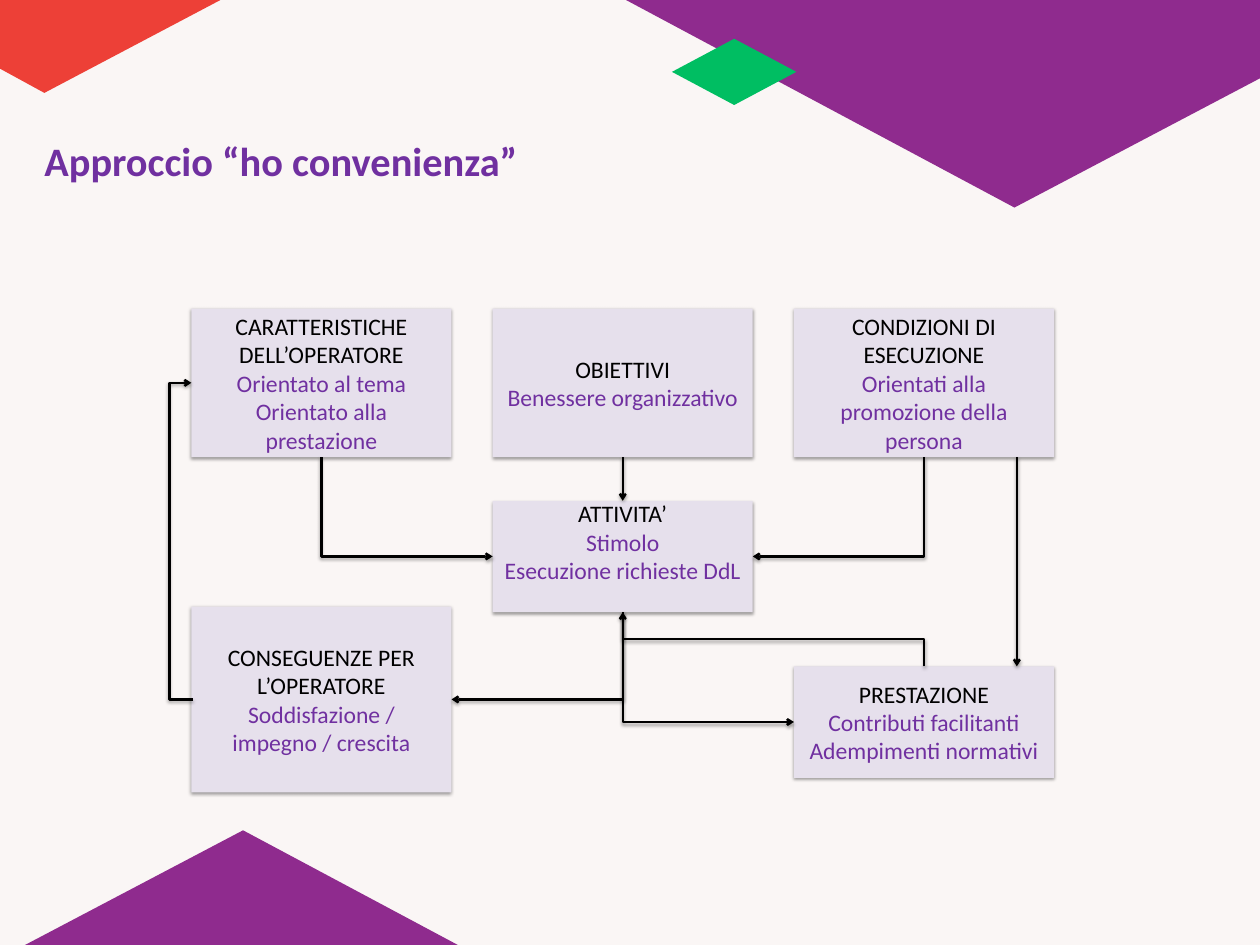
from lxml.etree import SubElement
from pptx import Presentation
from pptx.dml.color import RGBColor
from pptx.enum.shapes import MSO_CONNECTOR, MSO_SHAPE
from pptx.enum.text import MSO_ANCHOR, PP_ALIGN
from pptx.oxml.ns import qn
from pptx.util import Inches, Pt

WIDTH, HEIGHT = 15.6, 11.7
FONT = "Calibri"
CREAM = RGBColor(0xFA, 0xF6, 0xF5)
RED = RGBColor(0xED, 0x40, 0x37)
PLUM = RGBColor(0x8F, 0x2B, 0x8E)
GREEN = RGBColor(0x00, 0xBE, 0x62)
VIOLET = RGBColor(0x70, 0x30, 0xA0)
LILAC = RGBColor(0xE6, 0xE0, 0xEC)
BLACK = RGBColor(0x00, 0x00, 0x00)

TITLE = "Approccio “ho convenienza”"
DECORATIONS = [
    (RED, [(0.55, 1.15), (0, 0.85), (0, 0), (2.73, 0)]),
    (PLUM, [(0.31, HEIGHT), (3.01, 10.28), (5.67, HEIGHT)]),
    (PLUM, [(12.56, 2.57), (7.75, 0), (WIDTH, 0), (WIDTH, 0.97)]),
    (GREEN, [(9.09, 1.3), (8.32, 0.89), (9.09, 0.48), (9.86, 0.89)]),
]

# Grid of boxes: equal columns, top and height per box
GRID_LEFT, COLUMN_STEP, BOX_WIDTH = 2.37, 3.73, 3.22
# name: column, top, height, bottom inset, heading, lines
BOXES = {
    "operator": (0, 3.82, 1.84, 0.05, "CARATTERISTICHE DELL’OPERATORE",
                 ["Orientato al tema", "Orientato alla prestazione"]),
    "goals": (1, 3.82, 1.84, 0.05, "OBIETTIVI", ["Benessere organizzativo"]),
    "conditions": (2, 3.82, 1.84, 0.05, "CONDIZIONI DI ESECUZIONE",
                   ["Orientati alla promozione della persona"]),
    "activity": (1, 6.2, 1.38, 0.41, "ATTIVITA’",
                 ["Stimolo", "Esecuzione richieste DdL"]),
    "results": (0, 7.51, 2.3, 0.05, "CONSEGUENZE PER L’OPERATORE",
                ["Soddisfazione / impegno / crescita"]),
    "performance": (2, 8.25, 1.38, 0.05, "PRESTAZIONE",
                    ["Contributi facilitanti", "Adempimenti normativi"]),
}

TOP, LEFT, BOTTOM, RIGHT = range(4)
# Corner arrows: the pointed-at side first, then the side the line comes from
CORNERS = [
    ("activity", RIGHT, "conditions", BOTTOM),
    ("activity", LEFT, "operator", BOTTOM),
    ("results", RIGHT, "activity", BOTTOM),
    ("performance", LEFT, "activity", BOTTOM),
]
SIDE_ARROW_X = 12.59
LOOP_REACH, LOOP_WIDTH = 0.29, 0.02


def add_shadow(shape):
    properties = shape._element.spPr
    effects = properties.find(qn("a:effectLst"))
    if effects is None:
        effects = SubElement(properties, qn("a:effectLst"))
    shadow = SubElement(effects, qn("a:outerShdw"), blurRad=str(Pt(3.1)),
                        dist=str(Pt(1.6)), dir="5400000", rotWithShape="0")
    color = SubElement(shadow, qn("a:srgbClr"), val="000000")
    SubElement(color, qn("a:alpha"), val="38000")


def add_decoration(page, color, points):
    corners = [(Inches(x), Inches(y)) for x, y in points]
    builder = page.shapes.build_freeform(*corners[0])
    builder.add_line_segments(corners[1:], close=True)
    shape = builder.convert_to_shape()
    shape.shadow.inherit = False
    shape.fill.solid()
    shape.fill.fore_color.rgb = color
    shape.line.fill.background()


def style(para, size, color, bold=False):
    para.font.name = FONT
    para.font.size = Pt(size)
    para.font.color.rgb = color
    para.font.bold = bold


def add_title(page):
    frame = page.shapes.add_textbox(Inches(0.55), Inches(1.68),
                                    Inches(6.65), Inches(0.61)).text_frame
    frame.word_wrap = True
    frame.margin_left = frame.margin_right = 0
    frame.margin_top = frame.margin_bottom = 0
    frame.text = TITLE
    style(frame.paragraphs[0], 36, VIOLET, bold=True)


def add_box(page, column, top, height, inset, heading, lines):
    box = page.shapes.add_shape(
        MSO_SHAPE.RECTANGLE, Inches(GRID_LEFT + column * COLUMN_STEP),
        Inches(top), Inches(BOX_WIDTH), Inches(height))
    box.shadow.inherit = False
    box.fill.solid()
    box.fill.fore_color.rgb = LILAC
    box.line.fill.background()
    add_shadow(box)
    frame = box.text_frame
    frame.word_wrap = True
    frame.vertical_anchor = MSO_ANCHOR.MIDDLE
    frame.margin_bottom = Inches(inset)
    frame.text = "\n".join([heading] + lines)
    for index, para in enumerate(frame.paragraphs):
        para.alignment = PP_ALIGN.CENTER
        style(para, 21.1, VIOLET if index else BLACK)
    return box


def add_arrow(page, kind, arrow_end="a:tailEnd"):
    arrow = page.shapes.add_connector(kind, 0, 0, 0, 0)
    arrow.line.color.rgb = BLACK
    arrow.line.width = Pt(2)
    SubElement(arrow.line._get_or_add_ln(), qn(arrow_end), type="arrow")
    add_shadow(arrow)
    return arrow


def join(arrow, start, start_side, end, end_side):
    arrow.begin_connect(start, start_side)
    arrow.end_connect(end, end_side)


def turn_upright(arrow):
    """Rotate an elbow that runs up and left so it leaves vertically."""
    middle_x = arrow.left + arrow.width // 2
    middle_y = arrow.top + arrow.height // 2
    arrow.width, arrow.height = arrow.height, arrow.width
    arrow.left = middle_x - arrow.width // 2
    arrow.top = middle_y - arrow.height // 2
    frame = arrow._element.spPr.find(qn("a:xfrm"))
    frame.set("rot", "16200000")
    frame.set("flipH", "0")
    frame.set("flipV", "1")


def add_arrows(page, boxes):
    straight = add_arrow(page, MSO_CONNECTOR.STRAIGHT)
    join(straight, boxes["goals"], BOTTOM, boxes["activity"], TOP)

    side = add_arrow(page, MSO_CONNECTOR.STRAIGHT)
    side.begin_x = side.end_x = Inches(SIDE_ARROW_X)
    side.end_y = boxes["performance"].top
    side.begin_y = boxes["conditions"].top + boxes["conditions"].height

    for target, target_side, source, source_side in CORNERS:
        corner = add_arrow(page, MSO_CONNECTOR.ELBOW, "a:headEnd")
        corner._element.spPr.find(qn("a:prstGeom")).set("prst", "bentConnector2")
        join(corner, boxes[target], target_side, boxes[source], source_side)

    feedback = add_arrow(page, MSO_CONNECTOR.ELBOW)
    join(feedback, boxes["performance"], TOP, boxes["activity"], BOTTOM)
    turn_upright(feedback)

    loop = add_arrow(page, MSO_CONNECTOR.ELBOW)
    join(loop, boxes["results"], LEFT, boxes["operator"], LEFT)
    loop.begin_x = boxes["results"].left + Inches(LOOP_WIDTH)
    geometry = loop._element.spPr.find(qn("a:prstGeom"))
    guides = geometry.find(qn("a:avLst"))
    reach = round(LOOP_REACH / LOOP_WIDTH * 100000)
    SubElement(guides, qn("a:gd"), name="adj1", fmla=f"val {reach}")


def main():
    deck = Presentation()
    deck.slide_width, deck.slide_height = Inches(WIDTH), Inches(HEIGHT)
    page = deck.slides.add_slide(deck.slide_layouts[6])
    page.background.fill.solid()
    page.background.fill.fore_color.rgb = CREAM
    for color, points in DECORATIONS:
        add_decoration(page, color, points)
    add_title(page)
    boxes = {name: add_box(page, *content) for name, content in BOXES.items()}
    add_arrows(page, boxes)
    deck.save("out.pptx")


if __name__ == "__main__":
    main()
